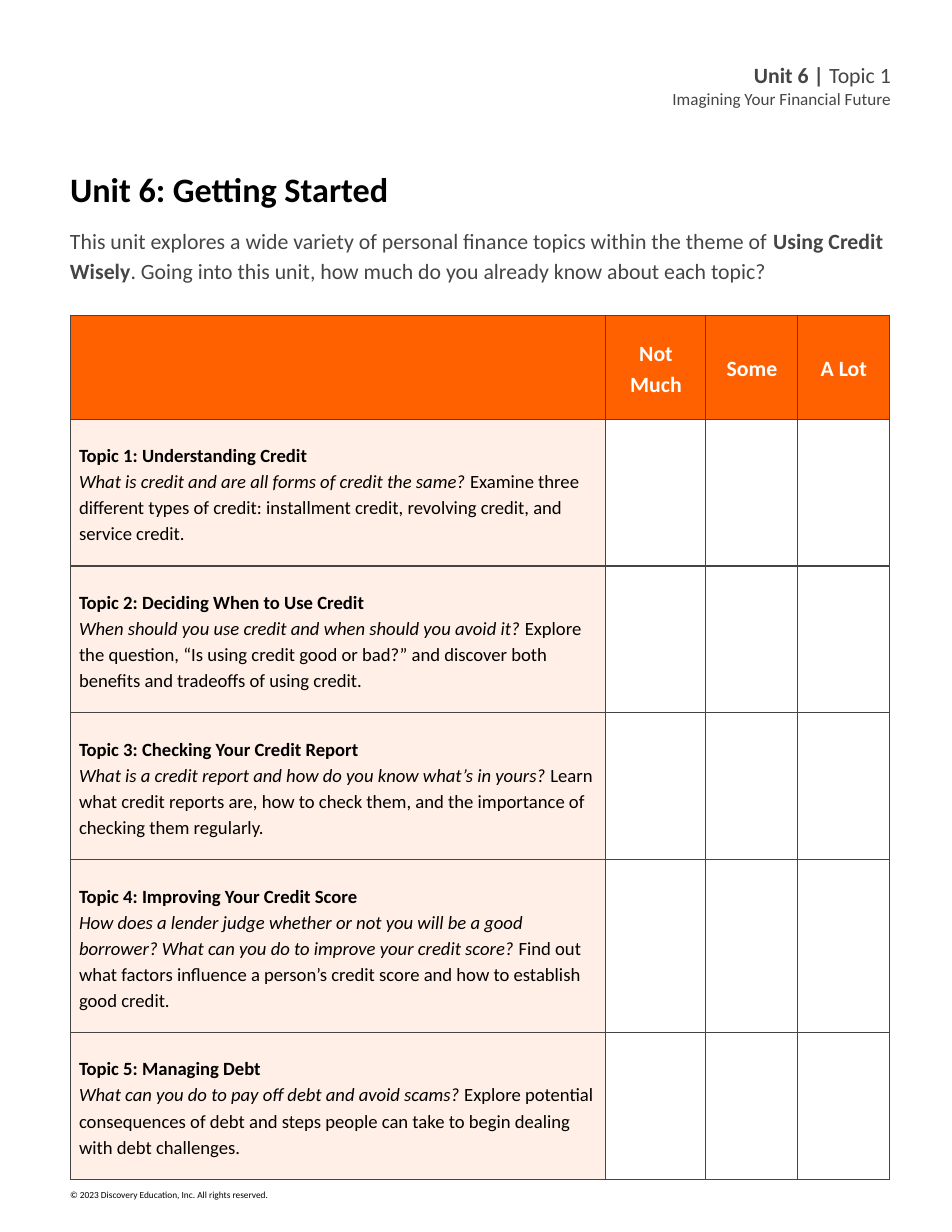
from lxml import etree
from pptx import Presentation
from pptx.dml.color import RGBColor
from pptx.enum.text import MSO_ANCHOR, PP_ALIGN
from pptx.oxml.ns import qn
from pptx.util import Pt

LEFT, MID, RIGHT, JUST = PP_ALIGN.LEFT, PP_ALIGN.CENTER, PP_ALIGN.RIGHT, PP_ALIGN.JUSTIFY
TOP, CENTER = MSO_ANCHOR.TOP, MSO_ANCHOR.MIDDLE
SCALE = 914400 / 112
HUES = {"ink": "000000", "gray": "454545", "head": "FF6000", "tint": "FFEFE6", "white": "FFFFFF"}
BOLD, ITALIC = {"bold": True}, {"italic": True}
LEVELS = ["Not Much", "Some", "A Lot"]
TOPICS = [
    ("Understanding Credit", "What is credit and are all forms of credit the same? ",
     "Examine three different types of credit: installment credit, revolving credit, and service credit."),
    ("Deciding When to Use Credit", "When should you use credit and when should you avoid it? ",
     "Explore the question, “Is using credit good or bad?” and discover both benefits and tradeoffs of using credit."),
    ("Checking Your Credit Report", "What is a credit report and how do you know what’s in yours? ",
     "Learn what credit reports are, how to check them, and the importance of checking them regularly."),
    ("Improving Your Credit Score",
     "How does a lender judge whether or not you will be a good borrower? What can you do to improve your credit score? ",
     "Find out what factors influence a person’s credit score and how to establish good credit."),
    ("Managing Debt", "What can you do to pay off debt and avoid scams? ",
     "Explore potential consequences of debt and steps people can take to begin dealing with debt challenges."),
]


def px(n):
    return round(n * SCALE)


class Sheet:
    """Draws the parts of a worksheet in one style."""

    def __init__(self, deck, face):
        self.slide = deck.slides.add_slide(deck.slide_layouts[6])
        self.face = face

    def fill_text(self, frame, paras, hue, align=LEFT, space=1.0):
        for i, (size, runs) in enumerate(paras):
            para = frame.add_paragraph() if i else frame.paragraphs[0]
            para.alignment, para.line_spacing = align, space
            for text, style in runs:
                run = para.add_run()
                run.text = text
                form = {"name": self.face, "size": Pt(size), "bold": False, "italic": False, **style}
                for key, value in form.items():
                    setattr(run.font, key, value)
                run.font.color.rgb = RGBColor.from_string(HUES[hue])

    def text(self, box, paras, hue, align=LEFT, space=1.0, anchor=TOP):
        frame = self.slide.shapes.add_textbox(*map(px, box)).text_frame
        form = {"word_wrap": True, "vertical_anchor": anchor, "margin_left": 0,
                "margin_right": 0, "margin_top": 0, "margin_bottom": 0}
        for key, value in form.items():
            setattr(frame, key, value)
        self.fill_text(frame, paras, hue, align, space)

    def grid(self, left, top, cols, rows):
        box = map(px, (left, top, sum(cols), sum(rows)))
        table = self.slide.shapes.add_table(len(rows), len(cols), *box).table
        table.horz_banding = table.first_row = False
        for col, width in zip(table.columns, cols):
            col.width = px(width)
        for row, height in zip(table.rows, rows):
            row.height = px(height)
        return table

    def cell(self, cell, fill, paras=(), hue="ink", align=LEFT, anchor=TOP):
        form = {"margin_left": px(9), "margin_right": px(9), "margin_top": px(22),
                "margin_bottom": px(22), "vertical_anchor": anchor}
        for key, value in form.items():
            setattr(cell, key, value)
        props = cell._tc.get_or_add_tcPr()
        for side in "LRTB":
            line = etree.SubElement(props, qn(f"a:ln{side}"), w=str(Pt(0.75)))
            solid = etree.SubElement(line, qn("a:solidFill"))
            etree.SubElement(solid, qn("a:srgbClr"), val=HUES["gray"])
        cell.fill.solid()
        cell.fill.fore_color.rgb = RGBColor.from_string(HUES[fill])
        self.fill_text(cell.text_frame, paras, hue, align, 1.15)


def main():
    deck = Presentation()
    deck.slide_width, deck.slide_height = px(952), px(1232)
    sheet = Sheet(deck, "Calibri")
    sheet.text((440, 62, 451, 47), [
        (14, [("Unit 6 | ", BOLD), ("Topic 1", {})]),
        (11, [("Imagining Your Financial Future", {})]),
    ], "gray", RIGHT, anchor=CENTER)
    sheet.text((70, 168, 812, 40), [(22, [("Unit 6: Getting Started", BOLD)])], "ink")
    sheet.text((70, 224, 819, 91), [(14, [
        ("This unit explores a wide variety of personal finance topics within the theme of ", {}),
        ("Using Credit Wisely", BOLD),
        (". Going into this unit, how much do you already know about each topic?", {}),
    ])], "gray", space=1.15)

    table = sheet.grid(70, 315, [536, 100, 92, 92], [100, 143, 143, 143, 169, 143])
    sheet.cell(table.cell(0, 0), "head")
    for col, level in enumerate(LEVELS, 1):
        sheet.cell(table.cell(0, col), "head", [(14, [(level, BOLD)])], "white", MID, CENTER)
    for row, (name, ask, plan) in enumerate(TOPICS, 1):
        paras = [(12, [(f"Topic {row}: {name}", BOLD)]), (12, [(ask, ITALIC), (plan, {})])]
        sheet.cell(table.cell(row, 0), "tint", paras)
        for col in range(1, 4):
            sheet.cell(table.cell(row, col), "white")

    sheet.text((70, 1188, 381, 12),
               [(6, [("© 2023 Discovery Education, Inc. All rights reserved.", {})])], "ink", JUST, 1.15)
    deck.save("out.pptx")


if __name__ == "__main__":
    main()
